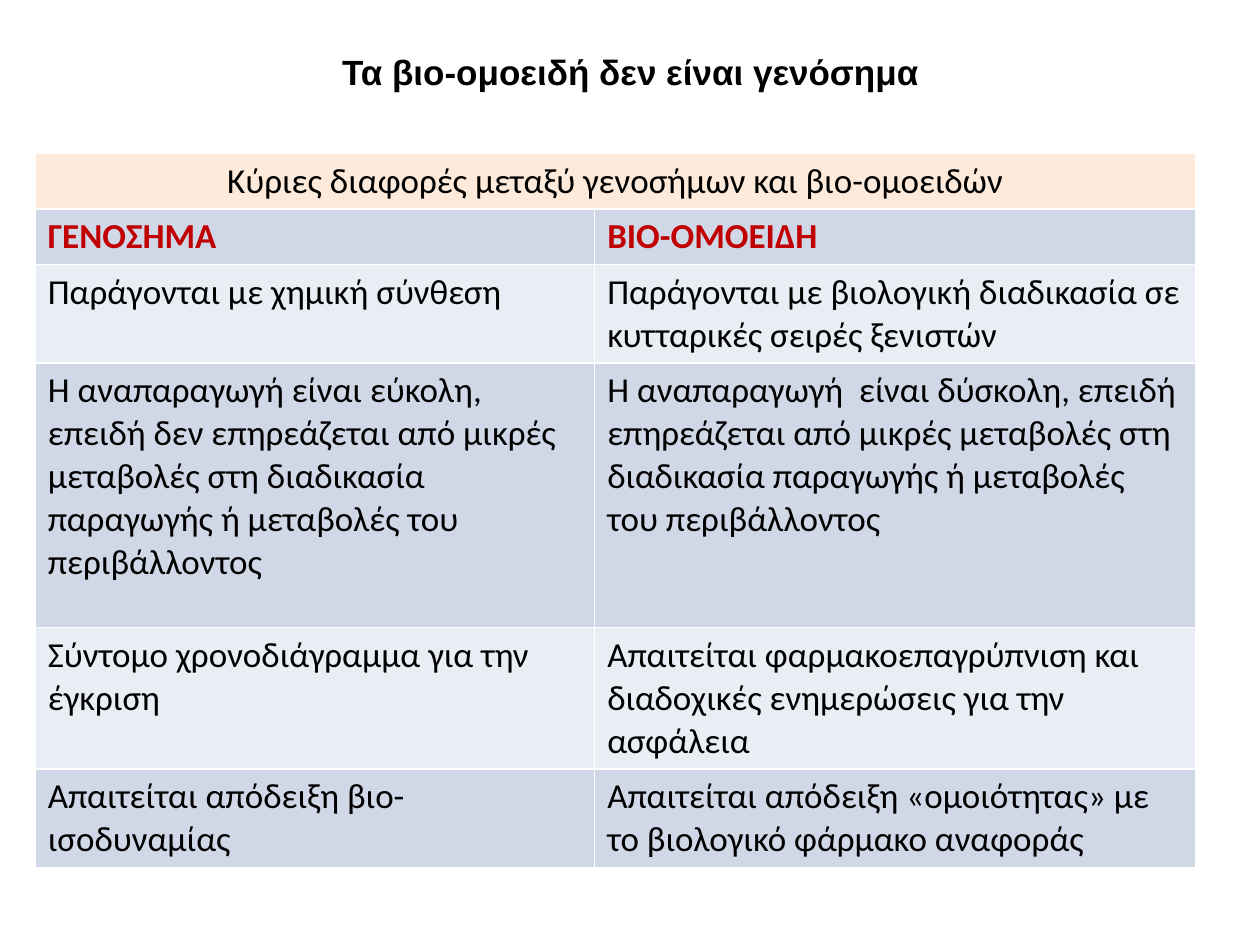
from pptx import Presentation
from pptx.dml.color import RGBColor
from pptx.enum.text import MSO_ANCHOR, PP_ALIGN
from pptx.util import Inches, Pt

TITLE = "Τα βιο-ομοειδή δεν είναι γενόσημα"
CAPTION = "Κύριες διαφορές μεταξύ γενοσήμων και βιο-ομοειδών"
HEADINGS = ("ΓΕΝΟΣΗΜΑ", "ΒΙΟ-ΟΜΟΕΙΔΗ")
DIFFERENCES = [
    ("Παράγονται με χημική σύνθεση",
     "Παράγονται με βιολογική διαδικασία σε κυτταρικές σειρές ξενιστών"),
    ("Η αναπαραγωγή είναι εύκολη, επειδή δεν επηρεάζεται από μικρές μεταβολές "
     "στη διαδικασία παραγωγής ή μεταβολές του περιβάλλοντος",
     "Η αναπαραγωγή  είναι δύσκολη, επειδή επηρεάζεται από μικρές μεταβολές "
     "στη διαδικασία παραγωγής ή μεταβολές του περιβάλλοντος"),
    ("Σύντομο χρονοδιάγραμμα για την έγκριση",
     "Απαιτείται φαρμακοεπαγρύπνιση και διαδοχικές ενημερώσεις για την ασφάλεια"),
    ("Απαιτείται απόδειξη βιο-ισοδυναμίας",
     "Απαιτείται απόδειξη «ομοιότητας» με το βιολογικό φάρμακο αναφοράς"),
]
COLUMN_WIDTHS = (4.44, 4.77)
ROW_HEIGHTS = (0.43, 0.43, 0.77, 2.1, 1.1, 0.77)
LEFT, TABLE_TOP = 0.28, 1.22
BLACK, RED, PEACH = "000000", "C00000", "FDEADA"
BANDS = ("D0D8E8", "E9EDF4")


def color(value):
    return RGBColor.from_string(value)


def write(frame, text, font="Calibri", ink=BLACK, bold=False, align=PP_ALIGN.LEFT):
    paragraph = frame.paragraphs[0]
    paragraph.alignment = align
    run = paragraph.add_run()
    run.text = text
    run.font.name = font
    run.font.size = Pt(20)
    run.font.bold = bold
    run.font.color.rgb = color(ink)


def fill_cell(cell, text, background, **text_format):
    cell.fill.solid()
    cell.fill.fore_color.rgb = color(background)
    write(cell.text_frame, text, **text_format)


def add_title(slide):
    title = slide.shapes.title
    title.left, title.top = Inches(LEFT), Inches(0.3)
    title.width, title.height = Inches(9.45), Inches(0.54)
    title.text_frame.vertical_anchor = MSO_ANCHOR.MIDDLE
    write(title.text_frame, TITLE, font="Arial", bold=True, align=PP_ALIGN.CENTER)


def add_comparison(slide):
    table = slide.shapes.add_table(
        len(ROW_HEIGHTS), len(COLUMN_WIDTHS), Inches(LEFT), Inches(TABLE_TOP),
        Inches(sum(COLUMN_WIDTHS)), Inches(sum(ROW_HEIGHTS))).table
    for column, width in zip(table.columns, COLUMN_WIDTHS):
        column.width = Inches(width)
    for row, height in zip(table.rows, ROW_HEIGHTS):
        row.height = Inches(height)

    caption = table.cell(0, 0)
    caption.merge(table.cell(0, 1))
    fill_cell(caption, CAPTION, PEACH, align=PP_ALIGN.CENTER)

    for row, texts in enumerate([HEADINGS, *DIFFERENCES]):
        heading = row == 0
        for column, text in enumerate(texts):
            fill_cell(table.cell(row + 1, column), text, BANDS[row % 2],
                      ink=RED if heading else BLACK, bold=heading)


def main():
    deck = Presentation()
    deck.slide_width, deck.slide_height = Inches(10), Inches(7.5)
    slide = deck.slides.add_slide(deck.slide_layouts.get_by_name("Title Only"))
    add_title(slide)
    add_comparison(slide)
    deck.save("out.pptx")


if __name__ == "__main__":
    main()
